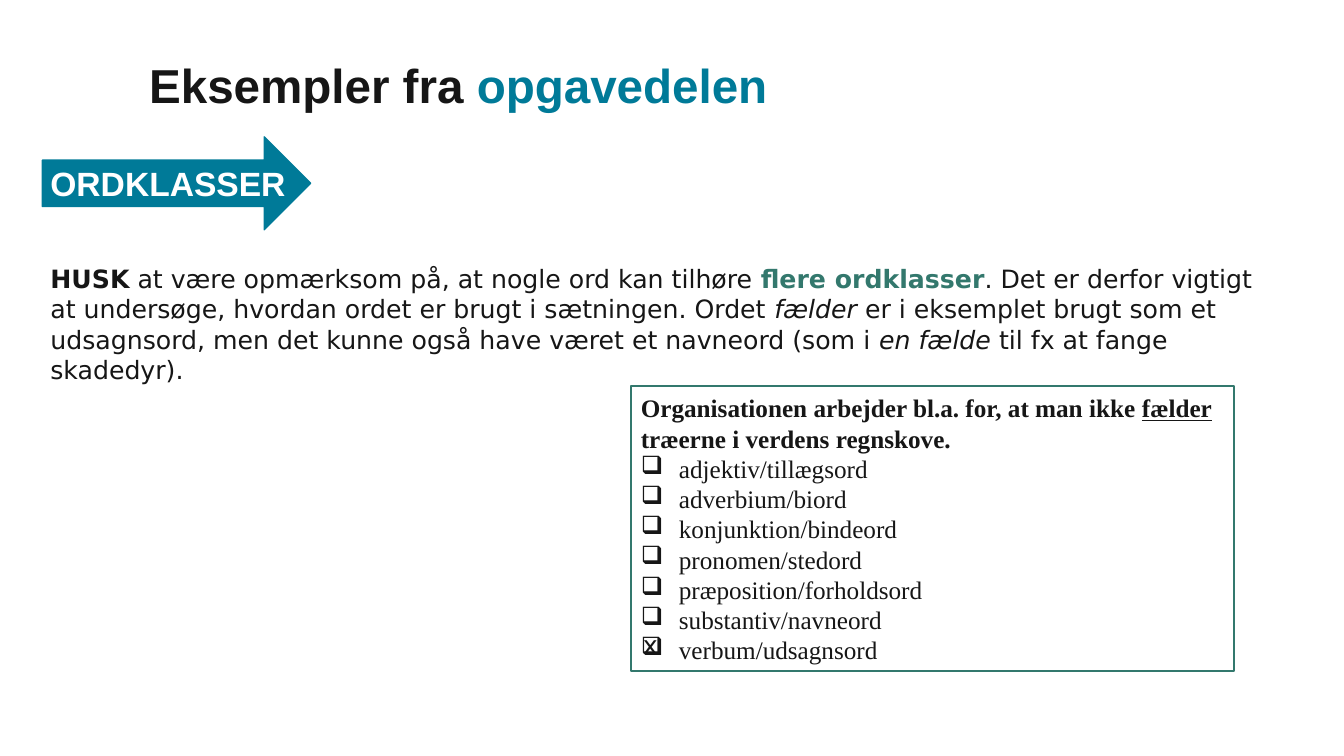
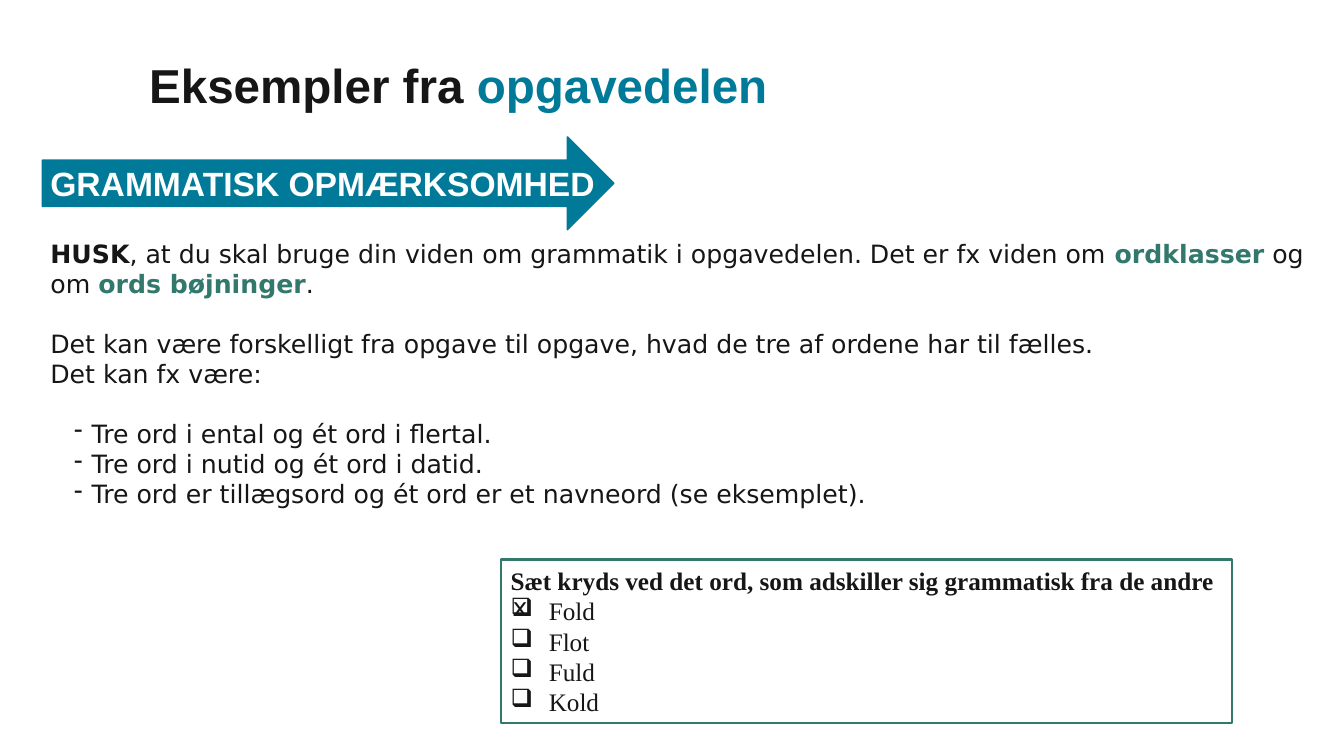
import dataclasses

import lxml.etree
import pptx
import pptx.dml.color
import pptx.enum.shapes
import pptx.enum.text
import pptx.oxml.ns
import pptx.util

Cm = pptx.util.Cm
Pt = pptx.util.Pt
ANCHOR = pptx.enum.text.MSO_ANCHOR
LEFT = pptx.enum.text.PP_ALIGN.LEFT


@dataclasses.dataclass(frozen=True)
class Theme:
    ink: str = "161616"
    teal: str = "007A98"
    green: str = "33786D"
    white: str = "FFFFFF"
    head_font: str = "Arial"
    body_font: str = "DejaVu Sans"
    task_font: str = "Times New Roman"
    title_size: int = 34
    label_size: int = 24
    body_size: int = 18


THEME = Theme()
LINE_PITCH = 0.76  # height of one task line, cm
BLANK_LINE = 21  # gap between blocks of body text, pt


def rgb(color):
    return pptx.dml.color.RGBColor.from_string(color)


def add_runs(p, parts, font, size, color=THEME.ink):
    """Fill p with parts: plain strings or (text, overrides) pairs."""
    for part in parts:
        text, style = (part, {}) if isinstance(part, str) else part
        r = p.add_run()
        r.text = text
        r.font.name = font
        r.font.size = Pt(size)
        r.font.bold = style.get("bold", False)
        r.font.italic = style.get("italic", False)
        r.font.underline = style.get("underline", False)
        r.font.color.rgb = rgb(style.get("color", color))


def bold(text, color=THEME.ink):
    return text, {"bold": True, "color": color}


def italic(text):
    return text, {"italic": True}


def set_bullet(p, char, indent, hanging):
    pPr = p._p.get_or_add_pPr()
    pPr.set("marL", str(Cm(indent + hanging)))
    pPr.set("indent", str(-Cm(hanging)))
    bu = lxml.etree.SubElement(pPr, pptx.oxml.ns.qn("a:buChar"))
    bu.set("char", char)


def set_frame(tf, anchor=ANCHOR.TOP, wrap=True, margins=(0.25, 0.13, 0.25, 0.13)):
    tf.auto_size = pptx.enum.text.MSO_AUTO_SIZE.NONE
    tf.word_wrap = wrap
    tf.vertical_anchor = anchor
    tf.margin_left, tf.margin_top, tf.margin_right, tf.margin_bottom = map(Cm, margins)


def next_paragraph(tf, first):
    p = tf.paragraphs[0] if first else tf.add_paragraph()
    p.alignment = LEFT
    return p


def add_box(s, kind, box, line, line_width):
    sp = s.shapes.add_shape(kind, *map(Cm, box))
    sp.shadow.inherit = False
    sp.line.color.rgb = rgb(line)
    sp.line.width = Pt(line_width)
    return sp


def add_title(s, box):
    title = s.shapes.title
    title.left, title.top, title.width, title.height = map(Cm, box)
    tf = title.text_frame
    set_frame(tf, margins=(0, 0, 0, 0))
    p = next_paragraph(tf, True)
    p.line_spacing = 0.83
    add_runs(p, [bold("Eksempler fra "), bold("opgavedelen", THEME.teal)],
             THEME.head_font, THEME.title_size)


def add_topic_arrow(s, box, label):
    sp = add_box(s, pptx.enum.shapes.MSO_SHAPE.RIGHT_ARROW, box, THEME.teal, 1)
    sp.fill.solid()
    sp.fill.fore_color.rgb = rgb(THEME.teal)
    tf = sp.text_frame
    set_frame(tf, ANCHOR.MIDDLE, wrap=False, margins=(0.2, 0, 0, 0))
    add_runs(next_paragraph(tf, True), [bold(label, THEME.white)],
             THEME.head_font, THEME.label_size)


def add_body(s, box, blocks):
    """blocks: groups of paragraphs, set apart by one blank line's height."""
    tf = s.shapes.add_textbox(*map(Cm, box)).text_frame
    set_frame(tf, margins=(0.33, 0.18, 0.33, 0.18))
    for b, (bulleted, paragraphs) in enumerate(blocks):
        for i, parts in enumerate(paragraphs):
            p = next_paragraph(tf, b == 0 and i == 0)
            if b > 0 and i == 0:
                p.space_before = Pt(BLANK_LINE)
            if bulleted:
                set_bullet(p, "-", 0.6, 0.44)
            add_runs(p, parts, THEME.body_font, THEME.body_size)


def add_task(s, box, question, options, answer):
    """Framed question with check boxes and a cross at the answer."""
    sp = add_box(s, pptx.enum.shapes.MSO_SHAPE.RECTANGLE, box, THEME.green, 1.5)
    sp.fill.background()
    tf = sp.text_frame
    set_frame(tf, ANCHOR.MIDDLE)
    for i, parts in enumerate(question):
        add_runs(next_paragraph(tf, i == 0), parts, THEME.task_font, THEME.body_size)
    for option in options:
        p = next_paragraph(tf, False)
        set_bullet(p, "❑", 0, 0.96)
        add_runs(p, [option], THEME.task_font, THEME.body_size)

    # Cross on the answer's check box
    row = len(question) + options.index(answer)
    left, top = box[:2]
    cross = s.shapes.add_textbox(Cm(left + 0.05), Cm(top + row * LINE_PITCH - 0.08),
                                 Cm(1), Cm(1.02))
    set_frame(cross.text_frame, wrap=False)
    add_runs(next_paragraph(cross.text_frame, True), ["x"],
             THEME.body_font, THEME.body_size)


def add_example_slide(prs, label, arrow_width, body_box, blocks, task_box, task):
    s = prs.slides.add_slide(prs.slide_layouts[5])
    add_title(s, (3.76, 1.65, 26.77, 0.94))
    add_topic_arrow(s, (1.07, 3.45, arrow_width, 2.34), label)
    add_body(s, body_box, blocks)
    add_task(s, task_box, *task)


def main():
    prs = pptx.Presentation()
    prs.slide_width, prs.slide_height = Cm(33.87), Cm(19.05)

    # Word classes
    add_example_slide(
        prs, "ORDKLASSER", 6.76,
        (0.94, 6.46, 31.57, 3.4),
        [(False, [[
            bold("HUSK"), " at være opmærksom på, at nogle ord kan tilhøre ",
            bold("flere ordklasser", THEME.green),
            ". Det er derfor vigtigt at undersøge, hvordan ordet er brugt i sætningen. Ordet ",
            italic("fælder "),
            "er i eksemplet brugt som et udsagnsord, men det kunne også have været "
            "et navneord (som i ",
            italic("en fælde"), " til fx at fange skadedyr).",
        ]])],
        (15.9, 9.73, 15.19, 7.19),
        (
            [[bold("Organisationen arbejder bl.a. for, at man ikke "),
              ("fælder", {"bold": True, "underline": True})],
             [bold("træerne i verdens regnskove.")]],
            ["adjektiv/tillægsord", "adverbium/biord", "konjunktion/bindeord",
             "pronomen/stedord", "præposition/forholdsord", "substantiv/navneord",
             "verbum/udsagnsord"],
            "verbum/udsagnsord",
        ),
    )

    # Grammatical awareness
    add_example_slide(
        prs, "GRAMMATISK OPMÆRKSOMHED", 14.4,
        (0.94, 5.82, 32.33, 7.3),
        [
            (False, [[
                bold("HUSK"),
                ", at du skal bruge din viden om grammatik i opgavedelen. Det er fx viden om ",
                bold("ordklasser", THEME.green), " og om ",
                bold("ords bøjninger", THEME.green), ".",
            ]]),
            (False, [
                ["Det kan være forskelligt fra opgave til opgave, "
                 "hvad de tre af ordene har til fælles."],
                ["Det kan fx være:"],
            ]),
            (True, [
                ["Tre ord i ental og ét ord i flertal."],
                ["Tre ord i nutid og ét ord i datid."],
                ["Tre ord er tillægsord og ét ord er et navneord (se eksemplet)."],
            ]),
        ],
        (12.62, 14.1, 18.42, 4.11),
        (
            [[bold("Sæt kryds ved det ord, som adskiller sig grammatisk fra de andre")]],
            ["Fold", "Flot", "Fuld", "Kold"],
            "Fold",
        ),
    )

    prs.save("out.pptx")


if __name__ == "__main__":
    main()
